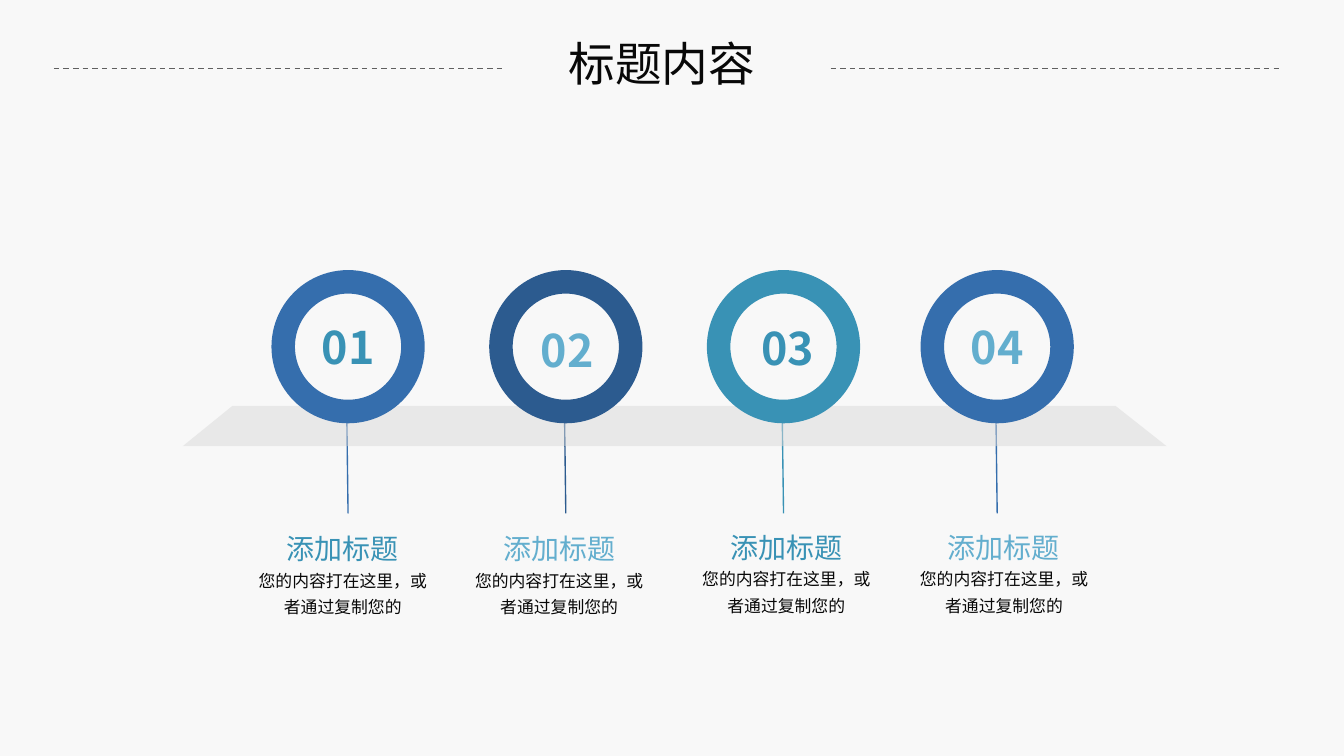
from lxml.etree import SubElement
from pptx import Presentation
from pptx.dml.color import RGBColor
from pptx.enum.dml import MSO_LINE_DASH_STYLE as Dash
from pptx.enum.shapes import MSO_CONNECTOR as Connector, MSO_SHAPE as Shape
from pptx.enum.text import MSO_ANCHOR as Anchor, MSO_AUTO_SIZE as AutoSize, PP_ALIGN as Align
from pptx.oxml.ns import qn
from pptx.util import Inches, Pt

THEME = {
    "font": "Noto Sans CJK SC",
    "paper": RGBColor.from_string("F8F8F8"),
    "ink": RGBColor.from_string("080808"),
    "rule": RGBColor.from_string("5F5F5F"),
    "platform": RGBColor.from_string("D9D9D9"),
    "blue": RGBColor.from_string("356EAD"),
    "navy": RGBColor.from_string("2C5B8F"),
    "teal": RGBColor.from_string("3992B5"),
    "sky": RGBColor.from_string("63AECE"),
    "title_size": Pt(25),
    "number_size": Pt(24),
    "heading_size": Pt(15),
    "body_size": Pt(9),
}


def write(box, text, size, color, bold=False, spacing=1.0, inset=(0.1, 0.05)):
    """Fill a box with one centred paragraph."""
    frame = box.text_frame
    across, down = (Inches(value) for value in inset)
    settings = {
        "word_wrap": True, "auto_size": AutoSize.NONE, "vertical_anchor": Anchor.TOP,
        "margin_left": across, "margin_right": across,
        "margin_top": down, "margin_bottom": down,
    }
    for name, value in settings.items():
        setattr(frame, name, value)
    para = frame.paragraphs[0]
    para.alignment, para.line_spacing = Align.CENTER, spacing
    span = para.add_run()
    span.text = text
    for name, value in {"name": THEME["font"], "size": size, "bold": bold}.items():
        setattr(span.font, name, value)
    span.font.color.rgb = color
    SubElement(span.font._element, qn("a:ea"), typeface=THEME["font"])


def draw_line(x1, y1, x2, y2, color, dash=None):
    line = page.shapes.add_connector(Connector.STRAIGHT, *map(Inches, (x1, y1, x2, y2)))
    line.line.color.rgb = color
    line.line.width = Pt(0.75)
    line.line.dash_style = dash
    SubElement(line._element.spPr, qn("a:effectLst"))


deck = Presentation()
deck.slide_width, deck.slide_height = Inches(10), Inches(10 * 9 / 16)
page = deck.slides.add_slide(deck.slide_layouts[5])
page.background.fill.solid()
page.background.fill.fore_color.rgb = THEME["paper"]

# Title between two dashed rules
title = page.shapes.title
title.left, title.top, title.width, title.height = map(Inches, (4.06, 0.21, 1.73, 0.52))
write(title, "标题内容", THEME["title_size"], THEME["ink"])
for rule_left in (0.4, 6.18):
    draw_line(rule_left, 0.51, rule_left + 3.34, 0.51, THEME["rule"], Dash.DASH)

# Each step: number, ring centre, number centre and top, caption centre and top, colours
steps = [
    ("01", 2.59, 2.59, 2.33, 2.55, 3.83, "blue", "teal"),
    ("02", 4.21, 4.22, 2.35, 4.16, 3.83, "navy", "sky"),
    ("03", 5.83, 5.86, 2.34, 5.85, 3.82, "teal", "teal"),
    ("04", 7.42, 7.42, 2.33, 7.47, 3.82, "blue", "sky"),
]
ring_size, ring_top, ring_band = 1.14, 2.01, 0.175
caption_width, number_width = 1.46, 0.66

# Stems lean very slightly to the right
for _, ring_x, _, _, _, _, ring_color, _ in steps:
    draw_line(ring_x - 0.01, 3.06, ring_x, 3.82, THEME[ring_color])

# Half-transparent platform over the stems, behind the rings
outline = page.shapes.build_freeform(Inches(1.36), Inches(3.32))
outline.add_line_segments(
    [(Inches(x), Inches(y)) for x, y in ((1.73, 3.02), (8.3, 3.02), (8.68, 3.32))])
platform = outline.convert_to_shape()
platform.shadow.inherit = False
platform.fill.solid()
platform.fill.fore_color.rgb = THEME["platform"]
platform.line.fill.background()
color_node = platform._element.spPr.find(qn("a:solidFill"))[0]
SubElement(color_node, qn("a:alpha"), val="50000")

for number, ring_x, number_x, number_top, caption_x, caption_top, ring_color, text_color in steps:
    ring = page.shapes.add_shape(
        Shape.DONUT, Inches(ring_x - ring_size / 2), Inches(ring_top),
        Inches(ring_size), Inches(ring_size))
    ring.adjustments[0] = ring_band / ring_size
    ring.shadow.inherit = False
    ring.fill.solid()
    ring.fill.fore_color.rgb = THEME[ring_color]
    ring.line.fill.background()

    accent = THEME[text_color]
    texts = [
        (number_x, number_top, number_width, 0.5, number,
         {"size": THEME["number_size"], "color": accent, "bold": True}),
        (caption_x, caption_top, caption_width, 0.38, "添加标题",
         {"size": THEME["heading_size"], "color": accent, "spacing": 1.5, "inset": (0.07, 0)}),
        (caption_x, caption_top + 0.33, caption_width, 0.47, "您的内容打在这里，或者通过复制您的",
         {"size": THEME["body_size"], "color": THEME["ink"], "spacing": 1.3,
          "inset": (0.07, 0.04)}),
    ]
    for center, top, width, height, text, style in texts:
        box = page.shapes.add_textbox(*map(Inches, (center - width / 2, top, width, height)))
        write(box, text, **style)

deck.save("out.pptx")
